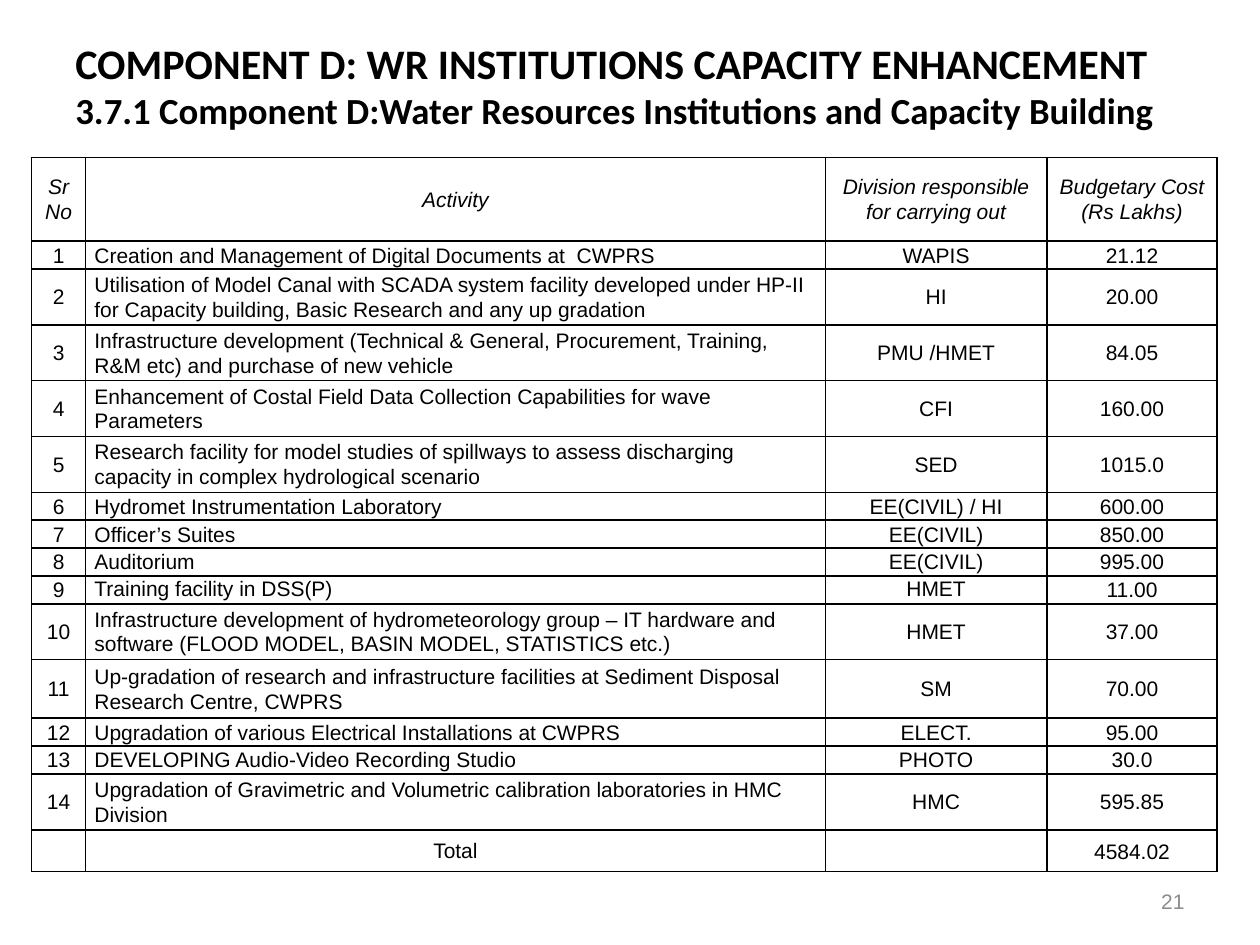
from lxml.etree import SubElement
from pptx import Presentation
from pptx.dml.color import RGBColor
from pptx.enum.text import MSO_ANCHOR, PP_ALIGN
from pptx.oxml.ns import qn
from pptx.util import Inches, Pt

COLOURS = {"ink": "000000", "page_number": "8C8C8C"}
COLUMNS = [0.43, 5.87, 1.76, 1.35]
TABLE_HEIGHT = 5.67
MIDDLE, TOP = MSO_ANCHOR.MIDDLE, MSO_ANCHOR.TOP
LEFT, CENTER, RIGHT = PP_ALIGN.LEFT, PP_ALIGN.CENTER, PP_ALIGN.RIGHT

# Each row: height in text lines, then its four cells
ROWS = [
    (3, "Sr No", "Activity", "Division responsible for carrying out", "Budgetary Cost (Rs Lakhs)"),
    (1, "1", "Creation and Management of Digital Documents at  CWPRS", "WAPIS", "21.12"),
    (2, "2", "Utilisation of Model Canal with SCADA system facility developed under HP-II "
     "for Capacity building, Basic Research and any up gradation", "HI", "20.00"),
    (2, "3", "Infrastructure development (Technical & General, Procurement, Training, "
     "R&M etc) and purchase of new vehicle", "PMU /HMET", "84.05"),
    (2, "4", "Enhancement of Costal Field Data Collection Capabilities for wave Parameters",
     "CFI", "160.00"),
    (2, "5", "Research facility for model studies of spillways to assess discharging "
     "capacity in complex hydrological scenario", "SED", "1015.0"),
    (1, "6", "Hydromet Instrumentation Laboratory", "EE(CIVIL) / HI", "600.00"),
    (1, "7", "Officer’s Suites", "EE(CIVIL)", "850.00"),
    (1, "8", "Auditorium", "EE(CIVIL)", "995.00"),
    (1, "9", "Training facility in DSS(P)", "HMET", "11.00"),
    (2, "10", "Infrastructure development of hydrometeorology group – IT hardware and "
     "software (FLOOD MODEL, BASIN MODEL, STATISTICS etc.)", "HMET", "37.00"),
    (2.1, "11", "Up-gradation of research and infrastructure facilities at Sediment Disposal "
     "Research Centre, CWPRS", "SM", "70.00"),
    (1, "12", "Upgradation of various Electrical Installations at CWPRS", "ELECT.", "95.00"),
    (1, "13", "DEVELOPING Audio-Video Recording Studio", "PHOTO", "30.0"),
    (2, "14", "Upgradation of Gravimetric and Volumetric calibration laboratories in HMC Division",
     "HMC", "595.85"),
    (1.5, "", "Total", "", "4584.02"),
]


def write(para, text, colour="ink", **formats):
    span = para.add_run()
    span.text = text
    for name, value in formats.items():
        setattr(span.font, name, value)
    span.font.color.rgb = RGBColor.from_string(COLOURS[colour])


def draw_borders(cell):
    properties = cell._tc.get_or_add_tcPr()
    for position, side in enumerate(("lnL", "lnR", "lnT", "lnB")):
        line = SubElement(properties, qn(f"a:{side}"), w=str(Pt(1)))
        fill = SubElement(line, qn("a:solidFill"))
        SubElement(fill, qn("a:srgbClr"), val=COLOURS["ink"])
        properties.insert(position, line)


deck = Presentation()
deck.slide_width, deck.slide_height = Inches(10), Inches(7.5)
page = deck.slides.add_slide(deck.slide_layouts[6])

# Title
box = page.shapes.add_textbox(Inches(0.5), Inches(0.3), Inches(9), Inches(1.25))
frame = box.text_frame
frame.word_wrap = True
frame.margin_top = 0
para = frame.paragraphs[0]
write(para, "COMPONENT D: WR INSTITUTIONS CAPACITY ENHANCEMENT",
      size=Pt(24), name="Calibri", bold=True)
para.add_line_break()
write(para, "3.7.1 Component D:Water Resources Institutions and Capacity Building",
      size=Pt(21), name="Calibri", bold=True)

# Page number
box = page.shapes.add_textbox(Inches(7.17), Inches(6.95), Inches(2.33), Inches(0.4))
box.text_frame.word_wrap = True
box.text_frame.vertical_anchor = MIDDLE
para = box.text_frame.paragraphs[0]
para.alignment = RIGHT
write(para, "21", "page_number", size=Pt(12), name="Arial")

# Budget table
table = page.shapes.add_table(len(ROWS), len(COLUMNS), Inches(0.25), Inches(1.25),
                              Inches(sum(COLUMNS)), Inches(TABLE_HEIGHT)).table
table.first_row = table.horz_banding = False
for column, width in zip(table.columns, COLUMNS):
    column.width = Inches(width)

line_height = TABLE_HEIGHT / sum(lines for lines, *_ in ROWS)
for row_index, (lines, *texts) in enumerate(ROWS):
    table.rows[row_index].height = Inches(line_height * lines)
    header, total = row_index == 0, row_index == len(ROWS) - 1
    for column_index, text in enumerate(texts):
        cell = table.cell(row_index, column_index)
        top_anchored = texts[0] == "9" and column_index in (1, 2)
        cell_format = {"margin_left": Inches(0.07), "margin_right": Inches(0.07),
                       "margin_top": 0, "margin_bottom": 0,
                       "vertical_anchor": TOP if top_anchored else MIDDLE}
        for name, value in cell_format.items():
            setattr(cell, name, value)
        cell.fill.background()
        draw_borders(cell)
        if text:
            para = cell.text_frame.paragraphs[0]
            activity = column_index == 1 and not header and not total
            para.alignment = LEFT if activity else CENTER
            para.line_spacing = 1.15 if total and column_index == 3 else 1.05
            write(para, text, size=Pt(12), name="Arial", italic=header)

deck.save("out.pptx")
